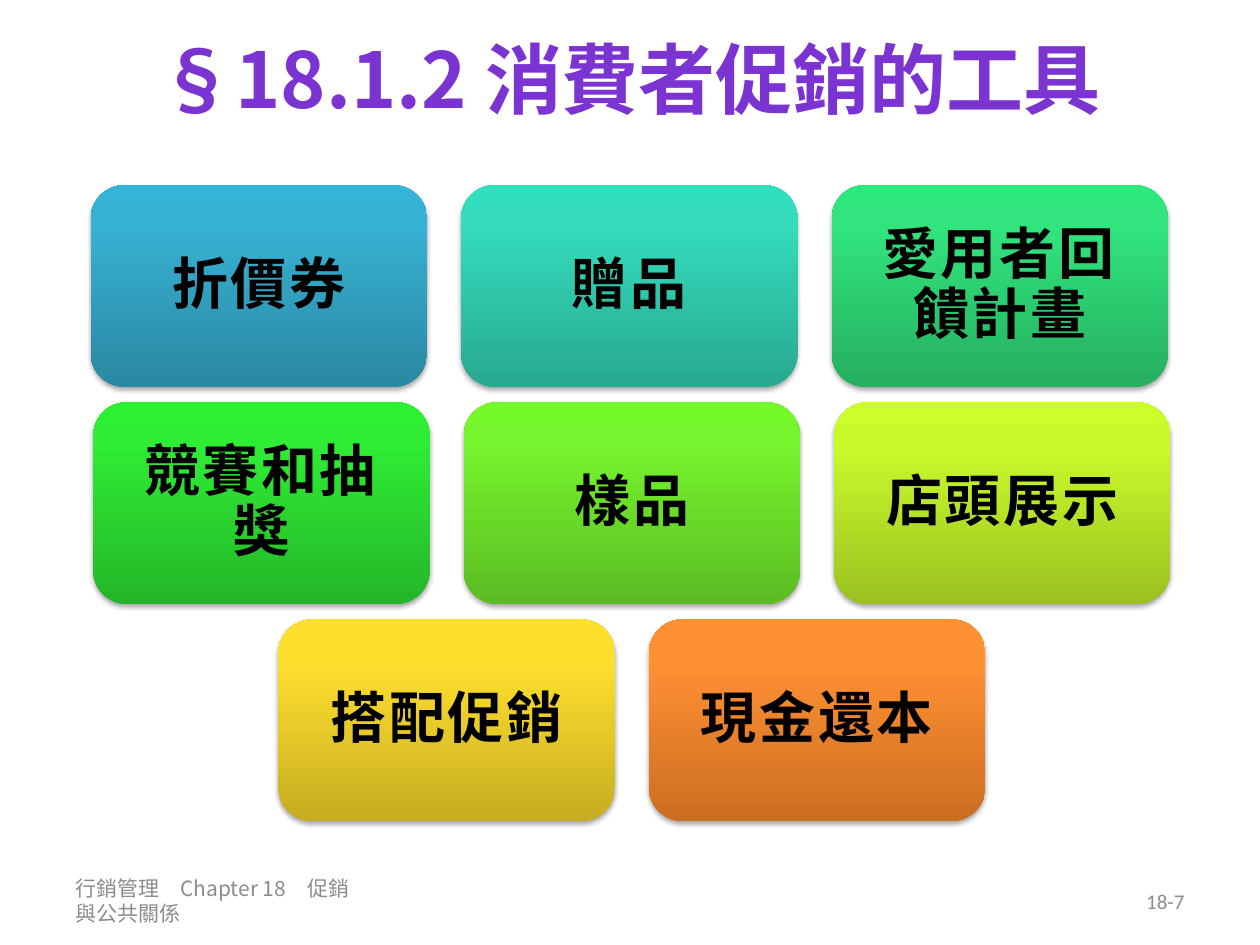
from copy import deepcopy
from dataclasses import dataclass

from lxml import etree
from pptx import Presentation
from pptx import util as u
from pptx.dml.color import RGBColor
from pptx.enum import shapes, text
from pptx.oxml.ns import qn


@dataclass(frozen=True)
class Theme:
    cjk: str = "Noto Sans CJK SC"
    latin: str = "Calibri"
    title: str = "7B34D2"
    ink: str = "000000"
    muted: str = "8C8C8C"
    head: int = 44
    body: int = 32
    foot: int = 12


THEME = Theme()
WIDE, HIGH = 10, 7.5

# Each row: shift from the grid's centre, then tiles as
# (label, gradient colours from bottom to top)
ROWS = [
    (-0.01, [("折價券", "2A88A2 37B1D2 34B4D6"),
             ("贈品", "28A991 34DBBC 31DFBF"),
             ("愛用者回饋計畫", "26AF60 31E47D 2EE87D")]),
    (0.01, [("競賽和抽獎", "24B628 2FEC34 2BF131"),
            ("樣品", "5BBC23 76F42D 75F929"),
            ("店頭展示", "9BC221 C9FB2B CCFF29")]),
    (0.01, [("搭配促銷", "C7AD21 FFDF2E FFDF2F"),
            ("現金還本", "CC6E20 FF9034 FF9136")]),
]


def write(frame, words, size, color, latin, align, bold=False):
    frame.word_wrap = True
    frame.auto_size = text.MSO_AUTO_SIZE.NONE
    frame.vertical_anchor = text.MSO_ANCHOR.MIDDLE
    para = frame.paragraphs[0]
    para.alignment = align
    run = para.add_run()
    run.text = words
    font = run.font
    font.size, font.bold, font.name = u.Pt(size), bold, latin
    font.color.rgb = RGBColor.from_string(color)
    asian = etree.SubElement(font._element, qn("a:ea"))
    asian.set("typeface", THEME.cjk)
    return para, run


def shade(shape, colors):
    """Fill from bottom to top with stops at 0, 80 and 100 percent."""
    fill = shape.fill
    fill.gradient()
    fill.gradient_angle = 90
    first = fill.gradient_stops[0]._gs
    first.addnext(deepcopy(first))
    for stop, place, color in zip(fill.gradient_stops, (0, 0.8, 1), colors):
        stop.position = place
        stop.color.rgb = RGBColor.from_string(color)


def lift(shape):
    """Add a soft shadow below the shape."""
    shape.shadow.inherit = False
    effects = shape._element.spPr.find(qn("a:effectLst"))
    outer = etree.SubElement(
        effects, qn("a:outerShdw"), blurRad=str(u.Pt(3.1)),
        dist=str(u.Pt(1.8)), dir="5400000", rotWithShape="0")
    tint = etree.SubElement(outer, qn("a:srgbClr"), val=THEME.ink)
    etree.SubElement(tint, qn("a:alpha"), val="35000")


def tile(slide, box, label, colors):
    shape = slide.shapes.add_shape(
        shapes.MSO_SHAPE.ROUNDED_RECTANGLE, *map(u.Inches, box))
    shade(shape, colors.split())
    shape.line.fill.background()
    lift(shape)
    frame = shape.text_frame
    frame.margin_left = frame.margin_right = u.Inches(0.13)
    frame.margin_top = frame.margin_bottom = u.Inches(0.13)
    para, run = write(frame, label, THEME.body, THEME.ink, THEME.latin,
                      text.PP_ALIGN.CENTER, bold=True)
    para.line_spacing = 0.9
    run.font._element.set("spc", "150")


def grid(slide, box, rows, gap=(0.27, 0.12)):
    """Stack rows of equal tiles, each row centred in the box."""
    left, top, wide, high = box
    most = max(len(tiles) for _, tiles in rows)
    w = (wide - gap[0] * (most - 1)) / most
    h = (high - gap[1] * (len(rows) - 1)) / len(rows)
    for r, (shift, tiles) in enumerate(rows):
        span = len(tiles) * (w + gap[0]) - gap[0]
        start = left + (wide - span) / 2 + shift
        for c, (label, colors) in enumerate(tiles):
            spot = (start + c * (w + gap[0]), top + r * (h + gap[1]), w, h)
            tile(slide, spot, label, colors)


def title(slide, box, words):
    shape = slide.shapes.title
    shape.left, shape.top, shape.width, shape.height = map(u.Inches, box)
    write(shape.text_frame, words, THEME.head, THEME.title, THEME.cjk,
          text.PP_ALIGN.CENTER, bold=True)


def footer(slide, box, words, page):
    left, top, wide, high = box
    parts = [(0, 2.45, words, THEME.cjk, text.PP_ALIGN.LEFT),
             (wide - 2.33, 2.33, page, THEME.latin, text.PP_ALIGN.RIGHT)]
    for shift, w, label, latin, align in parts:
        note = slide.shapes.add_textbox(
            *map(u.Inches, (left + shift, top, w, high)))
        write(note.text_frame, label, THEME.foot, THEME.muted, latin, align)


def main():
    deck = Presentation()
    deck.slide_width, deck.slide_height = u.Inches(WIDE), u.Inches(HIGH)
    slide = deck.slides.add_slide(deck.slide_layouts.get_by_name("Title Only"))
    edge = WIDE * 0.05
    inner = WIDE - 2 * edge
    title(slide, (edge, 0, inner, 1.23), "§18.1.2 消費者促銷的工具")
    footer(slide, (edge, 6.95, inner, 0.4),
           "行銷管理　Chapter 18　促銷與公共關係", "18-7")
    grid(slide, (0.73, 1.47, 8.55, 5.05), ROWS)
    deck.save("out.pptx")


if __name__ == "__main__":
    main()
